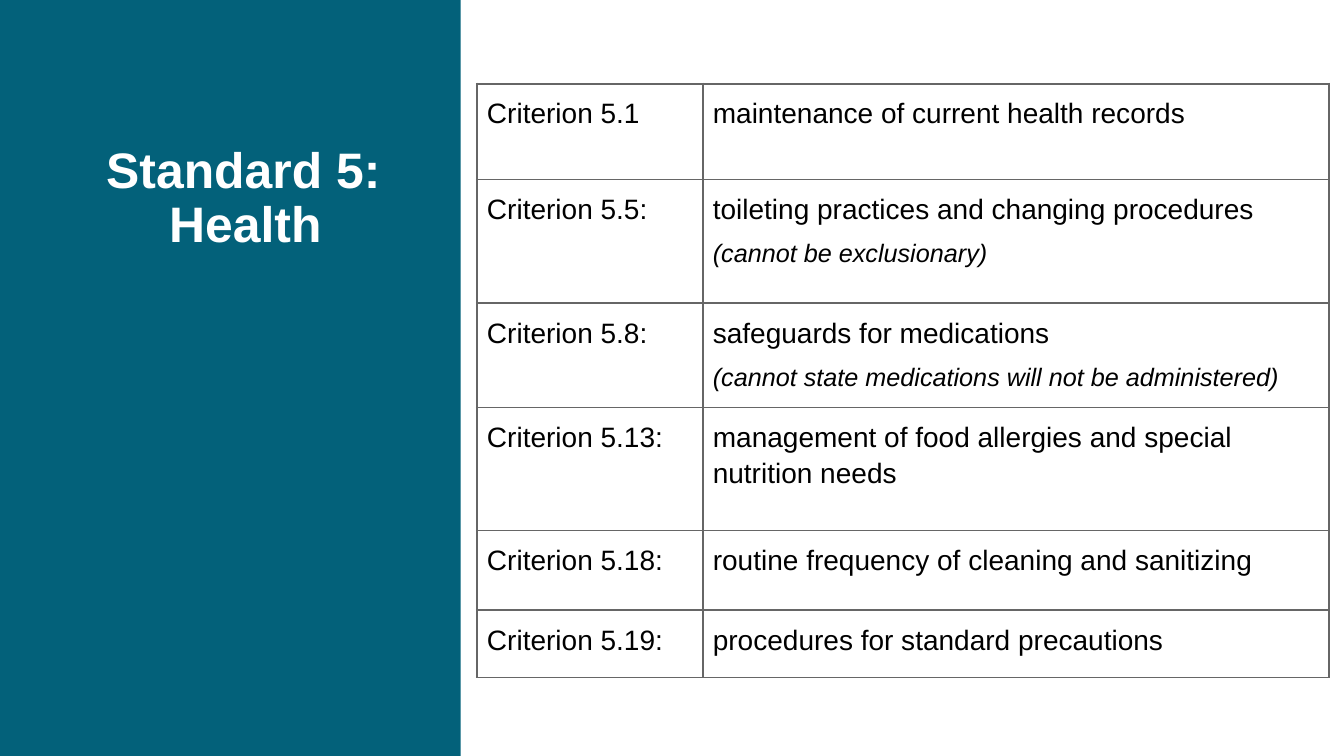
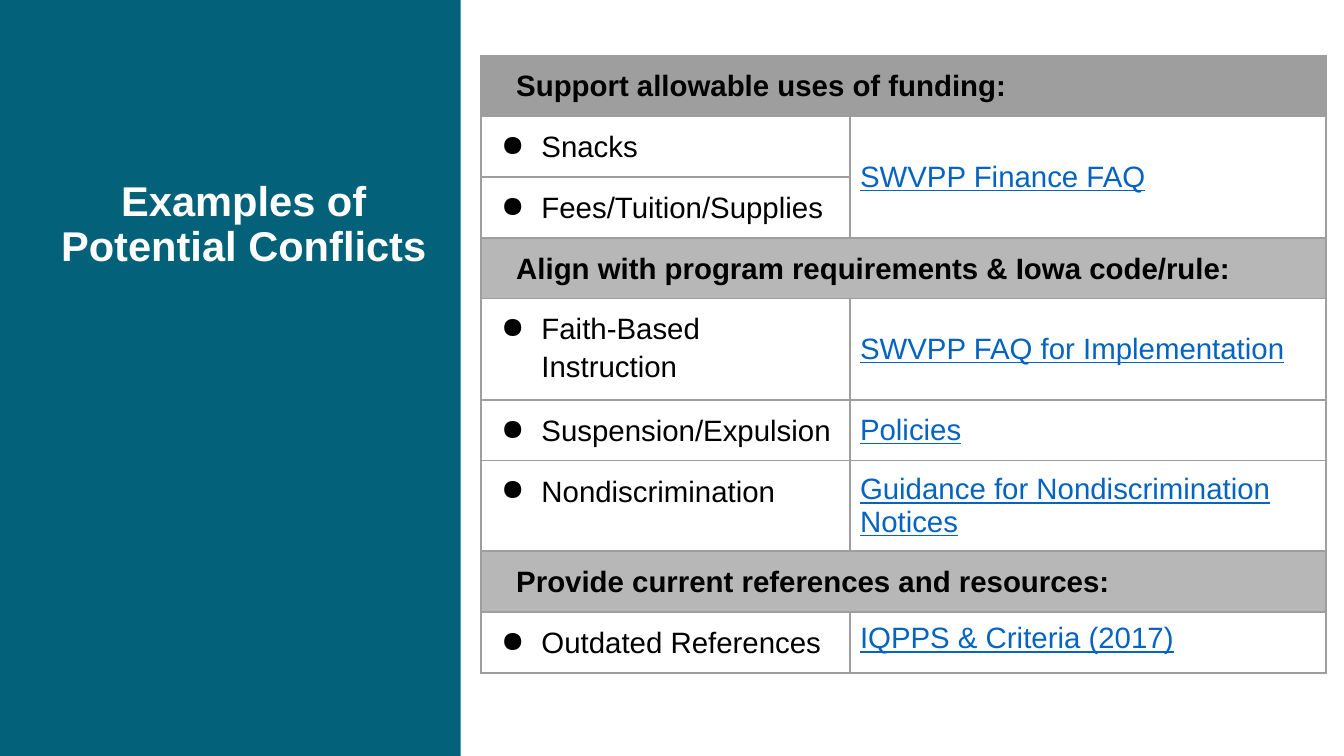
from lxml import etree
from pptx import Presentation
from pptx.dml.color import RGBColor
from pptx.enum import shapes, text
from pptx.oxml.ns import qn
from pptx.util import Inches, Pt

FONT = "Arial"
HEX = {
    "band": "03617A", "white": "FFFFFF", "black": "000000", "link": "0563C1",
    "grid": "666666", "rule": "9E9E9E", "head": "9E9E9E", "sub": "B7B7B7",
}


def rgb(name):
    return RGBColor.from_string(HEX[name])


def write(para, words, size, color="black", spacing=1.15, left=0, hang=0, bullet=False):
    """Fill a paragraph and return its font for further styling."""
    para.text = words
    para.line_spacing = spacing
    props = para._p.get_or_add_pPr()
    props.set("marL", str(Inches(left)))
    props.set("indent", str(Inches(hang)))
    if bullet:
        tint = etree.SubElement(props, qn("a:buClr"))
        etree.SubElement(tint, qn("a:srgbClr"), val=HEX[color])
        etree.SubElement(props, qn("a:buChar"), char="●")
    font = para.font
    font.name, font.size = FONT, Pt(size)
    font.color.rgb = rgb(color)
    return font


criteria = [
    ("Criterion 5.1", "maintenance of current health records", None),
    ("Criterion 5.5:", "toileting practices and changing procedures",
     "(cannot be exclusionary)"),
    ("Criterion 5.8:", "safeguards for medications",
     "(cannot state medications will not be administered)"),
    ("Criterion 5.13:", "management of food allergies and special nutrition needs", None),
    ("Criterion 5.18:", "routine frequency of cleaning and sanitizing", None),
    ("Criterion 5.19:", "procedures for standard precautions", None),
]
# A fill name in the second place marks a heading row.
topics = [
    ("Support allowable uses of funding:", "head"),
    ("Snacks", "SWVPP Finance FAQ"),
    ("Fees/Tuition/Supplies", None),
    ("Align with program requirements & Iowa code/rule:", "sub"),
    ("Faith-Based Instruction", "SWVPP FAQ for Implementation"),
    ("Suspension/Expulsion", "Policies"),
    ("Nondiscrimination", "Guidance for Nondiscrimination Notices"),
    ("Provide current references and resources:", "sub"),
    ("Outdated References", "IQPPS & Criteria (2017)"),
]
pages = [
    {"title": "Standard 5: Health", "box": (0.34, 1.42, 4, 1.54), "size": 35.6,
     "left": 0.19, "hang": -0.04, "foot": 0.48, "at": (4.73, 0.83), "line": "grid",
     "cols": (2.24, 6.21), "rows": (0.95, 1.23, 0.98, 1.22, 0.79, 0.67)},
    {"title": "Examples of Potential Conflicts", "box": (0.4, 1.73, 4.04, 1.01), "size": 29.7,
     "left": 0, "hang": 0, "foot": 0.05, "at": (4.77, 0.55), "line": "rule",
     "cols": (3.66, 4.72),
     "rows": (0.59, 0.59, 0.59, 0.59, 0.95, 0.59, 0.85, 0.59, 0.59)},
]

prs = Presentation()
prs.slide_width, prs.slide_height = Inches(13.33), Inches(7.5)
tables = []

for page in pages:
    slide = prs.slides.add_slide(prs.slide_layouts[6])
    band = slide.shapes.add_shape(
        shapes.MSO_SHAPE.RECTANGLE, 0, 0, Inches(4.57), prs.slide_height)
    band.shadow.inherit = False
    band.fill.solid()
    band.fill.fore_color.rgb = rgb("band")
    band.line.fill.background()

    frame = slide.shapes.add_textbox(*map(Inches, page["box"])).text_frame
    frame.word_wrap = True
    frame.vertical_anchor = text.MSO_ANCHOR.MIDDLE
    frame.margin_bottom = Inches(page["foot"])
    title = frame.paragraphs[0]
    title.alignment = text.PP_ALIGN.CENTER
    write(title, page["title"], page["size"], "white", 0.9,
          page["left"], page["hang"]).bold = True

    cols, rows = page["cols"], page["rows"]
    table = slide.shapes.add_table(
        len(rows), len(cols), *map(Inches, page["at"]),
        Inches(sum(cols)), Inches(sum(rows))).table
    table.first_row = table.horz_banding = False
    for col, width in zip(table.columns, cols):
        col.width = Inches(width)
    for row, height in zip(table.rows, rows):
        row.height = Inches(height)
    for cell in table.iter_cells():
        cell.margin_left = cell.margin_right = Inches(0.1)
        cell.margin_top = cell.margin_bottom = Inches(0.1)
        props = cell._tc.get_or_add_tcPr()
        for side in ("lnL", "lnR", "lnT", "lnB"):
            edge = etree.SubElement(props, qn(f"a:{side}"), w=str(Pt(1.5)))
            fill = etree.SubElement(edge, qn("a:solidFill"))
            etree.SubElement(fill, qn("a:srgbClr"), val=HEX[page["line"]])
        cell.fill.background()
    tables.append(table)

health, conflicts = tables

for r, (label, topic, note) in enumerate(criteria):
    write(health.cell(r, 0).text_frame.paragraphs[0], label, 20)
    frame = health.cell(r, 1).text_frame
    write(frame.paragraphs[0], topic, 20)
    if note:
        para = frame.add_paragraph()
        para.space_before = Pt(7.5)
        write(para, note, 18).italic = True

conflicts.cell(1, 1).merge(conflicts.cell(2, 1))
for r, (label, other) in enumerate(topics):
    cell, side = conflicts.cell(r, 0), conflicts.cell(r, 1)
    para = cell.text_frame.paragraphs[0]
    if other in HEX:
        cell.merge(side)
        cell.fill.solid()
        cell.fill.fore_color.rgb = rgb(other)
        write(para, label, 21, left=0.5, hang=-0.25).bold = True
        para._p.pPr.set("marL", str(Inches(0.25)))
        para._p.pPr.set("indent", "0")
        continue
    write(para, label, 21, left=0.5, hang=-0.4, bullet=True)
    if other:
        last = r == len(topics) - 1
        side.vertical_anchor = text.MSO_ANCHOR.TOP if last else text.MSO_ANCHOR.MIDDLE
        write(side.text_frame.paragraphs[0], other, 21, "link", 1.0).underline = True

prs.save("out.pptx")
